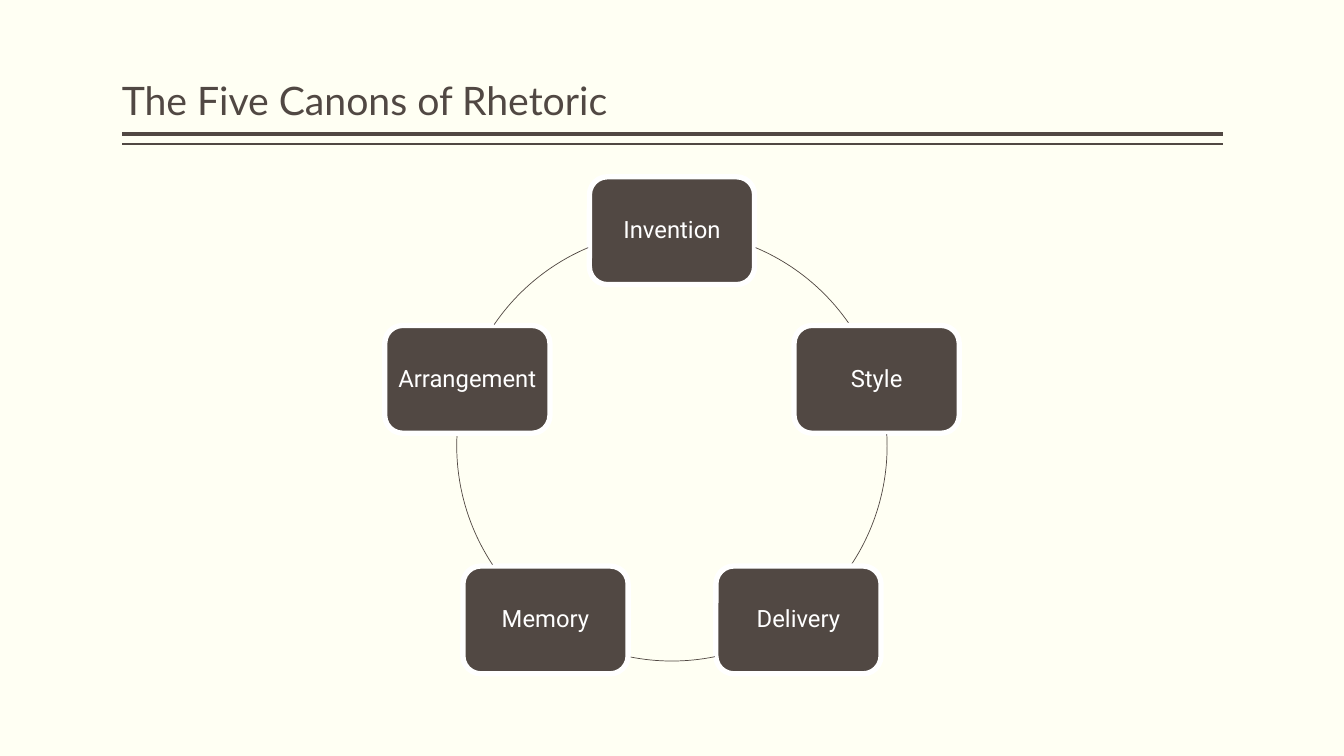
import dataclasses
import math

import lxml.etree
import pptx
import pptx.dml.color
import pptx.enum.shapes
import pptx.enum.text
import pptx.oxml.ns
import pptx.shapes.autoshape
import pptx.slide
import pptx.text.text
import pptx.util

Pt = pptx.util.Pt
MSO_SHAPE = pptx.enum.shapes.MSO_SHAPE

COLOURS = {"paper": "FFFFF3", "brown": "514843", "white": "FFFFFF"}

CYCLE_X, CYCLE_Y, CYCLE_RADIUS = 480, 318.5, 153.7
CANON_WIDTH, CANON_HEIGHT = 118, 77
RULE_LEFT, RULE_RIGHT = 87, 873.5


@dataclasses.dataclass(frozen=True)
class Canon:
    """A canon and the arc that follows it, in degrees clockwise from the right."""
    name: str
    arc_start: float
    arc_end: float


@dataclasses.dataclass(frozen=True)
class Rule:
    y: float
    weight: float


CANONS = [
    Canon("Invention", 292.9, 325.7),
    Canon("Style", 356.9, 33.5),
    Canon("Delivery", 78.5, 101.5),
    Canon("Memory", 146.5, 183.1),
    Canon("Arrangement", 214.3, 247.1),
]
RULES = [Rule(95.8, 3), Rule(102.8, 1)]


def colour(key: str) -> pptx.dml.color.RGBColor:
    return pptx.dml.color.RGBColor.from_string(COLOURS[key])


def write(frame: pptx.text.text.TextFrame, text: str, font: str, size: float,
          ink: str, align: pptx.enum.text.PP_ALIGN,
          anchor: pptx.enum.text.MSO_ANCHOR, inset_x: float, inset_y: float) -> None:
    frame.word_wrap = True
    frame.vertical_anchor = anchor
    frame.margin_left = frame.margin_right = Pt(inset_x)
    frame.margin_top = frame.margin_bottom = Pt(inset_y)
    paragraph = frame.paragraphs[0]
    paragraph.alignment = align
    paragraph.line_spacing = 0.9
    run = paragraph.add_run()
    run.text = text
    run.font.name = font
    run.font.size = Pt(size)
    run.font.color.rgb = colour(ink)


def add_outlined(slide: pptx.slide.Slide, kind: MSO_SHAPE, centre_x: float,
                 centre_y: float, width: float, height: float, ink: str,
                 weight: float) -> pptx.shapes.autoshape.Shape:
    shape = slide.shapes.add_shape(kind, Pt(centre_x - width / 2),
                                   Pt(centre_y - height / 2), Pt(width), Pt(height))
    shape.shadow.inherit = False
    shape.line.color.rgb = colour(ink)
    shape.line.width = Pt(weight)
    return shape


def draw_rule(slide: pptx.slide.Slide, rule: Rule) -> None:
    line = slide.shapes.add_connector(pptx.enum.shapes.MSO_CONNECTOR.STRAIGHT,
                                      Pt(RULE_RIGHT), Pt(rule.y),
                                      Pt(RULE_LEFT), Pt(rule.y))
    line.line.color.rgb = colour("brown")
    line.line.width = Pt(rule.weight)
    lxml.etree.SubElement(line.element.spPr, pptx.oxml.ns.qn("a:effectLst"))


def draw_canon(slide: pptx.slide.Slide, canon: Canon, turn: float) -> None:
    box = add_outlined(slide, MSO_SHAPE.ROUNDED_RECTANGLE,
                       CYCLE_X + CYCLE_RADIUS * math.sin(turn),
                       CYCLE_Y - CYCLE_RADIUS * math.cos(turn),
                       CANON_WIDTH, CANON_HEIGHT, "white", 3.78)
    box.fill.solid()
    box.fill.fore_color.rgb = colour("brown")
    write(box.text_frame, canon.name, "Roboto", 17, "white",
          pptx.enum.text.PP_ALIGN.CENTER, pptx.enum.text.MSO_ANCHOR.MIDDLE, 5, 5)

    arc = add_outlined(slide, MSO_SHAPE.ARC, CYCLE_X, CYCLE_Y,
                       2 * CYCLE_RADIUS, 2 * CYCLE_RADIUS, "brown", 0.5)
    arc.fill.background()
    # One degree is 60000 angle units; adjustments count in 100000ths
    arc.adjustments[0] = canon.arc_start * 0.6
    arc.adjustments[1] = canon.arc_end * 0.6


def main() -> None:
    deck = pptx.Presentation()
    deck.slide_width, deck.slide_height = Pt(960), Pt(540)
    slide = deck.slides.add_slide(deck.slide_layouts[6])
    slide.background.fill.solid()
    slide.background.fill.fore_color.rgb = colour("paper")

    # Heading with its double rule
    for rule in RULES:
        draw_rule(slide, rule)
    heading = slide.shapes.add_textbox(Pt(RULE_LEFT), Pt(5.8),
                                       Pt(RULE_RIGHT - RULE_LEFT), Pt(86.4))
    write(heading.text_frame, "The Five Canons of Rhetoric", "Lato", 28, "brown",
          pptx.enum.text.PP_ALIGN.LEFT, pptx.enum.text.MSO_ANCHOR.BOTTOM, 0, 3.6)

    # Cycle of canons, clockwise from the top
    for index, canon in enumerate(CANONS):
        draw_canon(slide, canon, index * math.tau / len(CANONS))

    deck.save("out.pptx")


if __name__ == "__main__":
    main()
